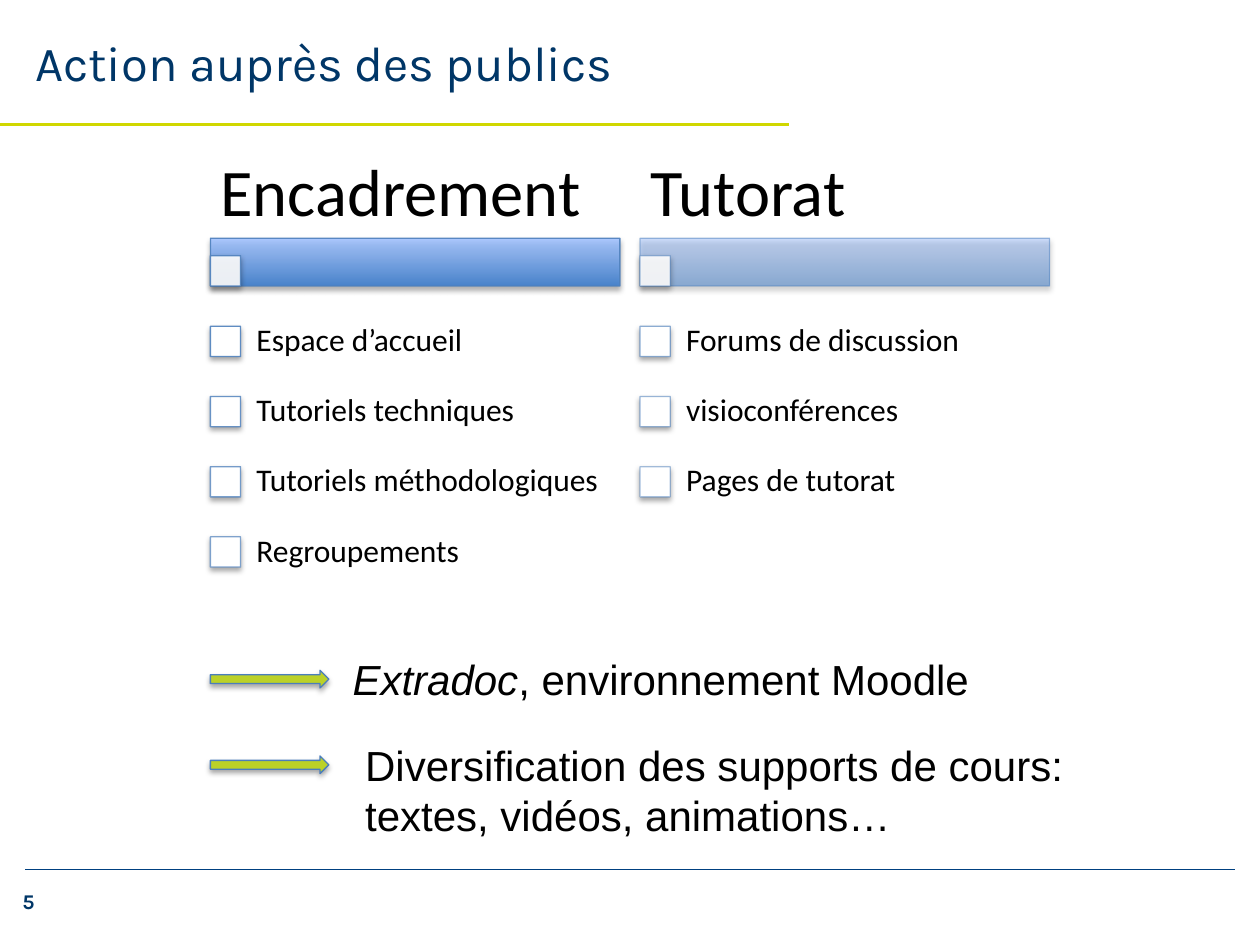
import pptx
import pptx.util
import pptx.dml.color
import pptx.enum.shapes
import pptx.enum.text
import pptx.oxml
import pptx.oxml.ns
import lxml.etree

Pt = pptx.util.Pt
Kind = pptx.enum.shapes.MSO_SHAPE
Mid = pptx.enum.text.MSO_ANCHOR.MIDDLE
Top = pptx.enum.text.MSO_ANCHOR.TOP
qn = pptx.oxml.ns.qn

NAVY, LIME, BLUE = "003667", "D0D700", "4F81BD"
COLS, ROWS = 100, 75
SHADE = (
    '<a:outerShdw xmlns:a="http://schemas.openxmlformats.org/drawingml/2006/main"'
    ' blurRad="39370" dist="23000" dir="5400000" rotWithShape="0">'
    '<a:srgbClr val="000000"><a:alpha val="35000"/></a:srgbClr></a:outerShdw>'
)


def tint(code):
    return pptx.dml.color.RGBColor.from_string(code)


def fade(node, share):
    for item in node.iter(qn("a:srgbClr")):
        alpha = lxml.etree.SubElement(item, qn("a:alpha"))
        alpha.set("val", str(round(share * 1000)))


class Deck:
    def __init__(self):
        self.prs = pptx.Presentation()
        self.prs.slide_width = pptx.util.Inches(10)
        self.prs.slide_height = pptx.util.Inches(7.5)
        self.slide = self.prs.slides.add_slide(self.prs.slide_layouts[6])
        self.shapes = self.slide.shapes

    def grid(self, x, y, w, h):
        col = self.prs.slide_width / COLS
        row = self.prs.slide_height / ROWS
        return [round(v) for v in (x * col, y * row, w * col, h * row)]

    def rule(self, x, y, end, code, width):
        left, top, right, _ = self.grid(x, y, end, 0)
        line = self.shapes.add_connector(
            pptx.enum.shapes.MSO_CONNECTOR.STRAIGHT, left, top, right, top)
        line.line.color.rgb = tint(code)
        line.line.width = Pt(width)
        lxml.etree.SubElement(line._element.spPr, qn("a:effectLst"))

    def text(self, area, runs, size, face, code="000000", anchor=Top,
             inset=(1, 0.5), bold=None, space=None):
        frame = self.shapes.add_textbox(*self.grid(*area)).text_frame
        frame.word_wrap = True
        frame.vertical_anchor = anchor
        side, edge = self.grid(*inset, 0, 0)[:2]
        frame.margin_left = frame.margin_right = side
        frame.margin_top = frame.margin_bottom = edge
        para = frame.paragraphs[0]
        para.line_spacing = space
        font = para.font
        font.size, font.name, font.bold = Pt(size), face, bold
        font.color.rgb = tint(code)
        for words, slant in runs:
            run = para.add_run()
            run.text = words
            if slant:
                run.font.italic = True

    def shape(self, area, kind, fill, edge, solid=100, clear=100):
        item = self.shapes.add_shape(kind, *self.grid(*area))
        if isinstance(fill, tuple):
            item.fill.gradient()
            item.fill.gradient_angle = 90
            for stop, code in zip(item.fill.gradient_stops, fill):
                stop.color.rgb = tint(code)
        else:
            item.fill.solid()
            item.fill.fore_color.rgb = tint(fill)
        props = item._element.spPr
        if solid < 100:
            fade(props, solid)
        item.line.color.rgb = tint(edge)
        item.line.width = Pt(0.75)
        if clear < 100:
            fade(props.find(qn("a:ln")), clear)
        item.shadow.inherit = False
        props.find(qn("a:effectLst")).append(pptx.oxml.parse_xml(SHADE))

    def box(self, x, y, clear, solid=100):
        self.shape((x, y, 2.4, 2.4), Kind.RECTANGLE, "FFFFFF", BLUE, solid, clear)

    def group(self, x, head, items, clear, first):
        self.shape((x, 18.9, 32.5, 3.8), Kind.RECTANGLE,
                   ("3F7FCE", "A4C4FF"), BLUE, clear, clear)
        self.box(x, 20.3, clear, 90)
        self.text((x, 12, 32.5, 6.9), [(head, False)], 38, "Calibri",
                  anchor=Mid, inset=(0.8, 0.5), space=0.9)
        for i, label in enumerate(items):
            y = 24.3 + 5.57 * i
            self.box(x, y + 1.6, 90 - (first + i) * 40 / 6)
            self.text((x + 2.25, y, 30.2, 5.6), [(label, False)], 18, "Calibri",
                      anchor=Mid, inset=(1.4, 1.4), space=0.9)

    def point(self, y, x, w, h, runs):
        self.shape((16.7, y + 1.8, 9.4, 1.4), Kind.RIGHT_ARROW, "BBD128", "4B7EBC")
        self.text((x, y, w, h), runs, 24, "Arial")


def main():
    deck = Deck()
    deck.rule(2, 69, 98, "004080", 0.5)
    deck.rule(0, 9.9, 62.6, LIME, 2)
    deck.text((0.8, 70, 9.5, 3), [("5", False)], 12, "Karla", NAVY, bold=True)
    deck.text((1.8, 0, 88, 9.9), [("Action auprès des publics", False)],
              28, "Karla", NAVY, anchor=Mid)
    deck.group(16.7, "Encadrement",
               ["Espace d’accueil", "Tutoriels techniques",
                "Tutoriels méthodologiques", "Regroupements"], 90, 0)
    deck.group(50.8, "Tutorat",
               ["Forums de discussion", "visioconférences", "Pages de tutorat"],
               50, 4)
    deck.point(51.4, 27, 56.7, 5,
               [("Extradoc", True), (", environnement Moodle", False)])
    deck.point(58.2, 28, 58.3, 9.1,
               [("Diversification des supports de cours: "
                 "textes, vidéos, animations…", False)])
    deck.prs.save("out.pptx")


if __name__ == "__main__":
    main()
